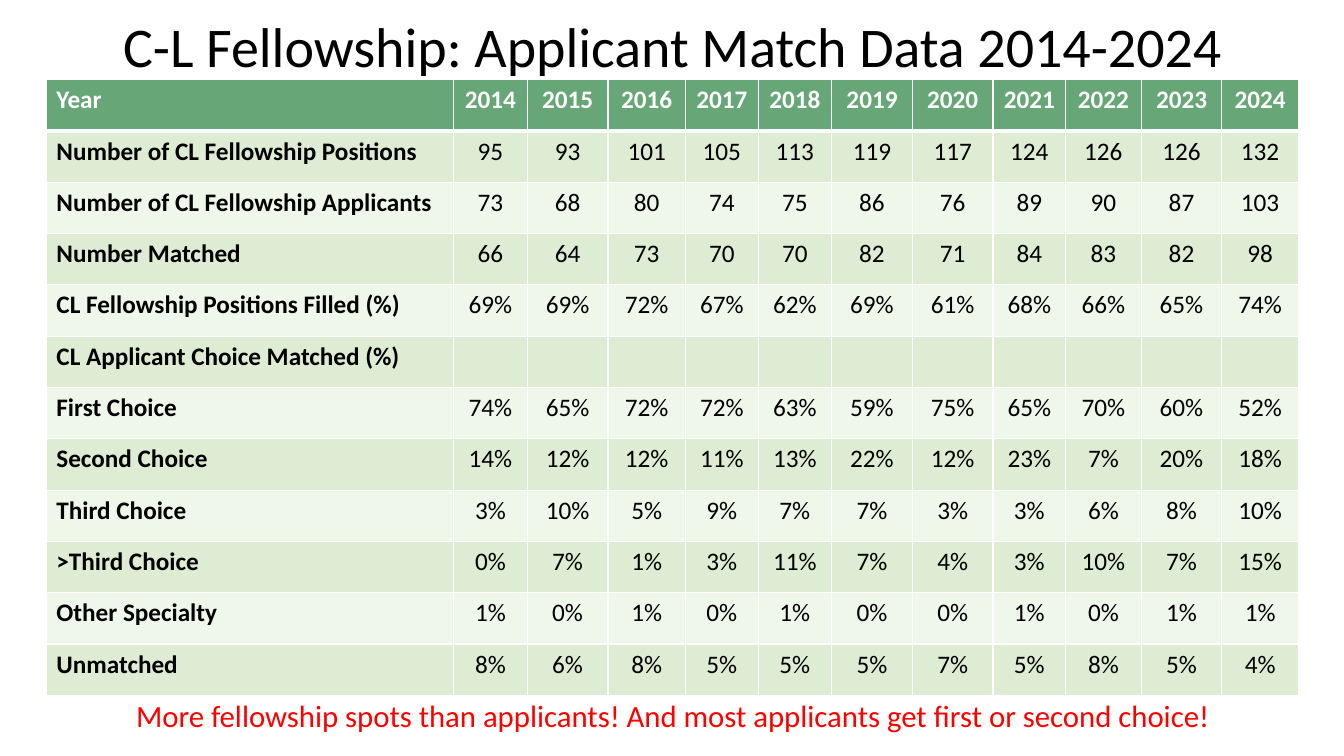
from dataclasses import dataclass

import lxml.etree
import pptx
import pptx.dml.color
import pptx.enum.text
import pptx.oxml.ns
import pptx.util

Inches = pptx.util.Inches
CENTER = pptx.enum.text.PP_ALIGN.CENTER


@dataclass(frozen=True)
class Theme:
    font: str = "Calibri"
    title_size: int = 40
    note_size: int = 22
    table_size: int = 18
    black: str = "000000"
    white: str = "FFFFFF"
    red: str = "FF0000"
    header: str = "66A677"
    bands: tuple = ("DEECD3", "EFF6EA")
    rule: int = 1
    header_rule: int = 3


theme = Theme()


def add_run(para, text, size, color, bold=False):
    span = para.add_run()
    span.text = text
    span.font.name = theme.font
    span.font.size = pptx.util.Pt(size)
    span.font.bold = bold
    span.font.color.rgb = pptx.dml.color.RGBColor.from_string(color)


def set_border(cell, side, width):
    """Draw one white cell border; side is L, R, T or B."""
    qn = pptx.oxml.ns.qn
    line = lxml.etree.SubElement(
        cell._tc.get_or_add_tcPr(), qn(f"a:ln{side}"), w=str(pptx.util.Pt(width)))
    fill = lxml.etree.SubElement(line, qn("a:solidFill"))
    lxml.etree.SubElement(fill, qn("a:srgbClr"), val=theme.white)


deck = pptx.Presentation()
deck.slide_width = Inches(13.33)
deck.slide_height = Inches(7.5)
page = deck.slides.add_slide(deck.slide_layouts[6])

captions = [
    ("C-L Fellowship: Applicant Match Data 2014-2024",
     (0.32, 0.14, 12.7, 0.81), theme.title_size, theme.black),
    ("More fellowship spots than applicants! And most applicants get first or second choice!",
     (0.01, 6.9, 13.33, 0.59), theme.note_size, theme.red),
]
for text, place, size, color in captions:
    box = page.shapes.add_textbox(*map(Inches, place))
    box.text_frame.word_wrap = True
    para = box.text_frame.paragraphs[0]
    para.alignment = CENTER
    para.line_spacing = 0.9
    add_run(para, text, size, color)

# Each row: label, values for the years in order, suffix of the values
match_data = [
    ("Year", range(2014, 2025), ""),
    ("Number of CL Fellowship Positions",
     [95, 93, 101, 105, 113, 119, 117, 124, 126, 126, 132], ""),
    ("Number of CL Fellowship Applicants",
     [73, 68, 80, 74, 75, 86, 76, 89, 90, 87, 103], ""),
    ("Number Matched", [66, 64, 73, 70, 70, 82, 71, 84, 83, 82, 98], ""),
    ("CL Fellowship Positions Filled (%)",
     [69, 69, 72, 67, 62, 69, 61, 68, 66, 65, 74], "%"),
    ("CL Applicant Choice Matched (%)", [], ""),
    ("First Choice", [74, 65, 72, 72, 63, 59, 75, 65, 70, 60, 52], "%"),
    ("Second Choice", [14, 12, 12, 11, 13, 22, 12, 23, 7, 20, 18], "%"),
    ("Third Choice", [3, 10, 5, 9, 7, 7, 3, 3, 6, 8, 10], "%"),
    (">Third Choice", [0, 7, 1, 3, 11, 7, 4, 3, 10, 7, 15], "%"),
    ("Other Specialty", [1, 0, 1, 0, 1, 0, 0, 1, 0, 1, 1], "%"),
    ("Unmatched", [8, 6, 8, 5, 5, 5, 7, 5, 8, 5, 4], "%"),
]
column_widths = [4.04, 0.73, 0.8, 0.77, 0.72, 0.73, 0.8, 0.8, 0.72, 0.75, 0.8, 0.76]

table = page.shapes.add_table(
    len(match_data), len(column_widths),
    Inches(0.46), Inches(0.79), Inches(12.42), Inches(6.11)).table
for column, width in zip(table.columns, column_widths):
    column.width = Inches(width)

for row, (label, values, suffix) in enumerate(match_data):
    is_header = row == 0
    band = theme.header if is_header else theme.bands[(row - 1) % 2]
    color = theme.white if is_header else theme.black
    top_rule = theme.header_rule if row == 1 else theme.rule
    bottom_rule = theme.header_rule if is_header else theme.rule
    texts = [label] + [f"{value}{suffix}" for value in values]

    for column in range(len(column_widths)):
        cell = table.cell(row, column)
        for side, width in zip("LRTB", (theme.rule, theme.rule, top_rule, bottom_rule)):
            set_border(cell, side, width)
        cell.fill.solid()
        cell.fill.fore_color.rgb = pptx.dml.color.RGBColor.from_string(band)
        if column < len(texts):
            para = cell.text_frame.paragraphs[0]
            if column > 0:
                para.alignment = CENTER
            add_run(para, texts[column], theme.table_size, color,
                    bold=is_header or column == 0)

deck.save("out.pptx")
